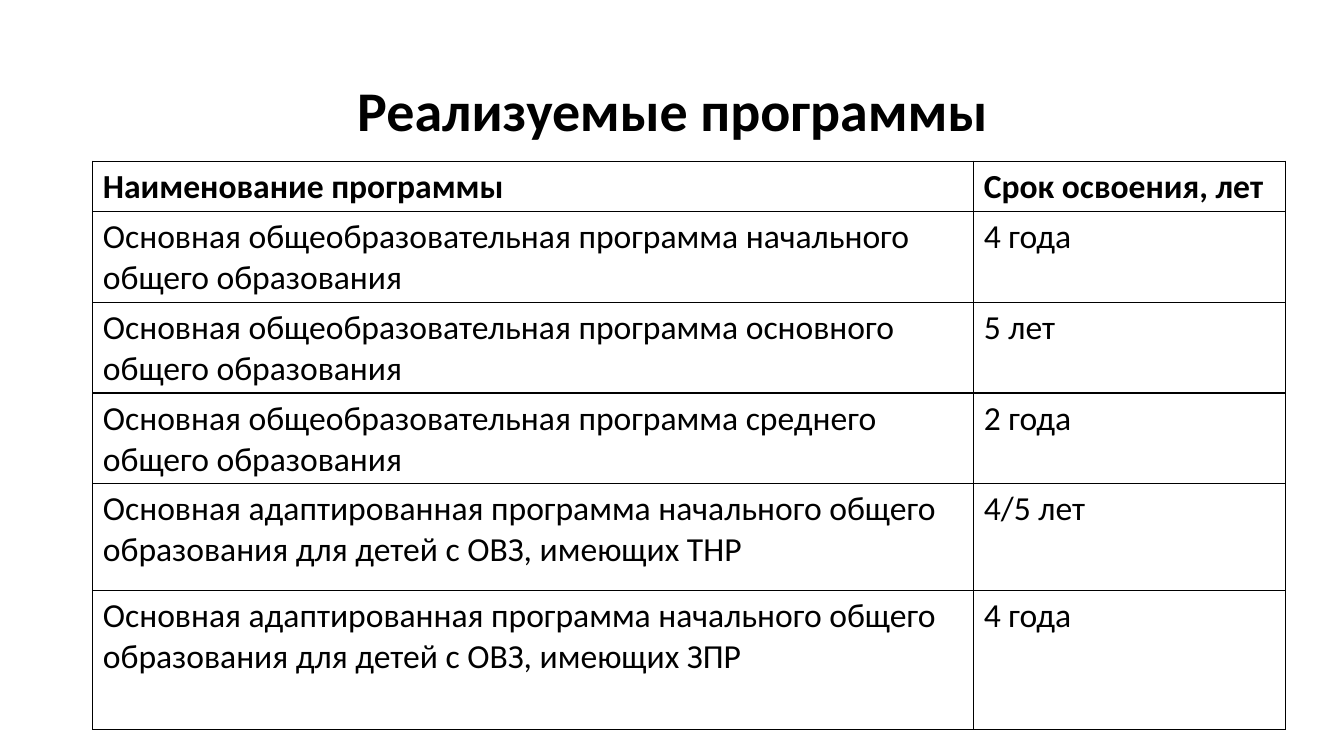
from lxml.etree import SubElement
from pptx import Presentation
from pptx.dml.color import RGBColor as Rgb
from pptx.enum.text import MSO_ANCHOR as Anchor, PP_ALIGN as Align
from pptx.oxml.ns import qn
from pptx.util import Cm, Pt

INK = {"text": "000000", "line": "000000", "cell": "FFFFFF", "back": "FFFFFF"}
FONT = "Calibri"
BASIC = "Основная общеобразовательная программа {} общего образования"
ADAPT = ("Основная адаптированная программа начального общего "
         "образования для детей с ОВЗ, имеющих {}")
ROWS = [
    ("Наименование программы", "Срок освоения, лет", 1.19),
    (BASIC.format("начального"), "4 года", 2.16),
    (BASIC.format("основного"), "5 лет", 2.16),
    (BASIC.format("среднего"), "2 года", 2.16),
    (ADAPT.format("ТНР"), "4/5 лет", 2.69),
    (ADAPT.format("ЗПР"), "4 года", 3.51),
]
TERM = 7.85  # width of the right column


def add_run(para, text, size, bold):
    run = para.add_run()
    run.text = text
    font = run.font
    font.name, font.size, font.bold = FONT, Pt(size), bold
    font.color.rgb = Rgb.from_string(INK["text"])


def add_title(slide, left, top, width, height):
    box = slide.shapes.add_textbox(Cm(left), Cm(top), Cm(width), Cm(height))
    frame = box.text_frame
    frame.word_wrap = True
    frame.vertical_anchor = Anchor.MIDDLE
    para = frame.paragraphs[0]
    para.alignment = Align.CENTER
    para.line_spacing = 0.9
    add_run(para, "Реализуемые программы", 40, True)


def add_edges(cell):
    props = cell._tc.get_or_add_tcPr()
    for place, side in enumerate(("lnL", "lnR", "lnT", "lnB")):
        line = props.makeelement(qn(f"a:{side}"), {"w": str(Pt(1))})
        fill = SubElement(line, qn("a:solidFill"))
        SubElement(fill, qn("a:srgbClr"), val=INK["line"])
        props.insert(place, line)  # edges come before the fill


def add_grid(slide, left, top, width):
    height = sum(row[2] for row in ROWS)
    table = slide.shapes.add_table(
        len(ROWS), 2, Cm(left), Cm(top), Cm(width), Cm(height)).table
    table.horz_banding = False
    table.columns[0].width = Cm(width - TERM)
    table.columns[1].width = Cm(TERM)
    for r, (name, term, tall) in enumerate(ROWS):
        table.rows[r].height = Cm(tall)
        for c, text in enumerate((name, term)):
            cell = table.cell(r, c)
            cell.fill.solid()
            cell.fill.fore_color.rgb = Rgb.from_string(INK["cell"])
            add_edges(cell)
            add_run(cell.text_frame.paragraphs[0], text, 24, r == 0)


def main():
    deck = Presentation()
    deck.slide_width, deck.slide_height = Cm(33.87), Cm(19.05)
    slide = deck.slides.add_slide(deck.slide_layouts[6])
    back = slide.background.fill
    back.solid()
    back.fore_color.rgb = Rgb.from_string(INK["back"])

    # Heading
    add_title(slide, 2.34, 1.02, 29.21, 3.68)
    # Programmes and their terms
    add_grid(slide, 2.34, 4.06, 30.05)
    deck.save("out.pptx")


if __name__ == "__main__":
    main()
